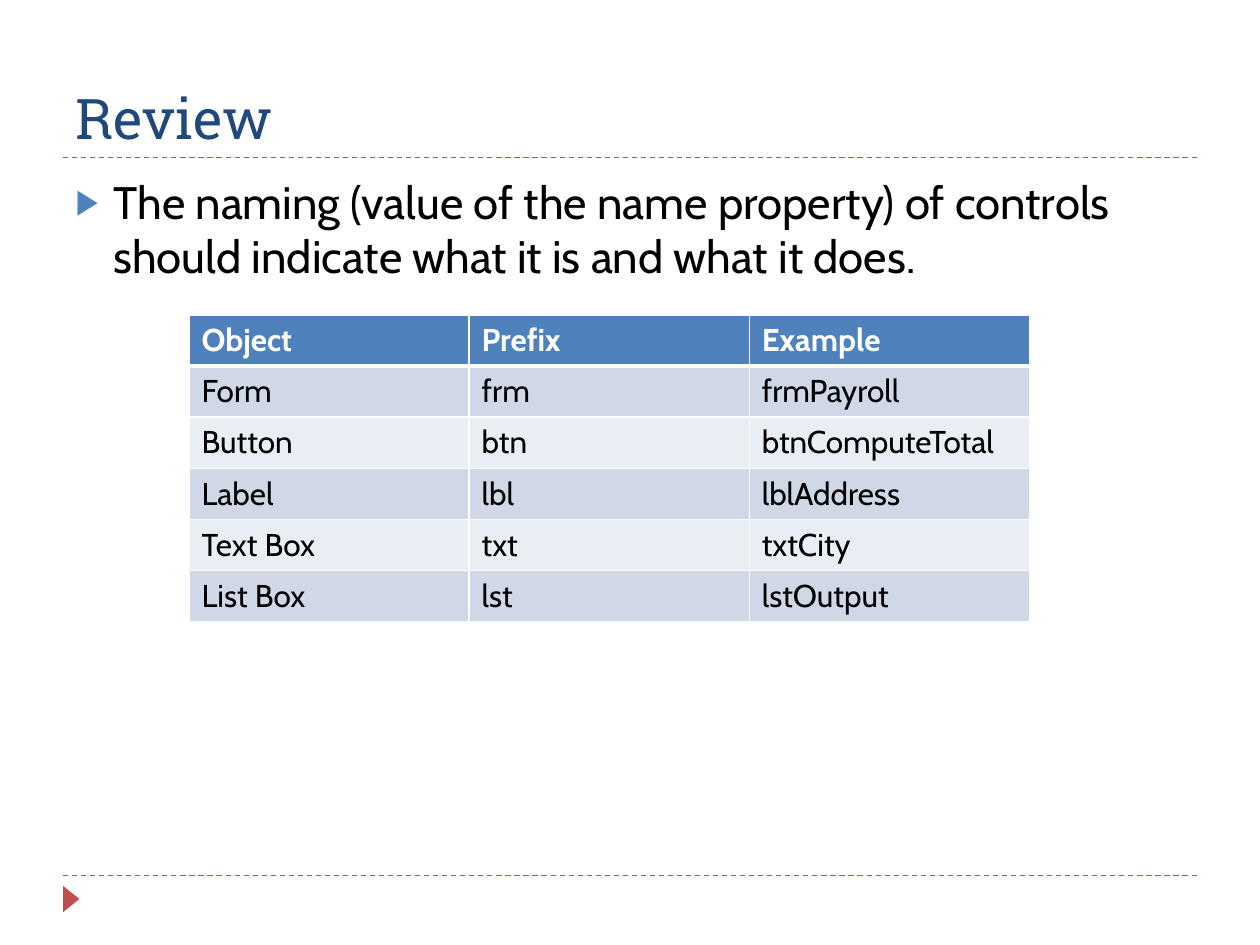
from lxml import etree
from pptx import Presentation
from pptx.dml.color import RGBColor
from pptx.enum.dml import MSO_LINE
from pptx.enum.shapes import MSO_CONNECTOR, MSO_SHAPE
from pptx.enum.text import MSO_ANCHOR, MSO_AUTO_SIZE, PP_ALIGN
from pptx.oxml import parse_xml
from pptx.oxml.ns import nsdecls, qn
from pptx.util import Inches, Pt

STRAIGHT = MSO_CONNECTOR.STRAIGHT
TRIANGLE = MSO_SHAPE.ISOSCELES_TRIANGLE
DASH = MSO_LINE.DASH
LEFT = PP_ALIGN.LEFT
TOP, BOTTOM = MSO_ANCHOR.TOP, MSO_ANCHOR.BOTTOM
NO_FIT = MSO_AUTO_SIZE.NONE

NAVY = RGBColor(0x1F, 0x49, 0x7D)
BLUE = RGBColor(0x4F, 0x81, 0xBD)
RED = RGBColor(0xC0, 0x50, 0x4D)
BLACK = RGBColor(0, 0, 0)
WHITE = RGBColor(0xFF, 0xFF, 0xFF)
BANDS = (RGBColor(0xD0, 0xD8, 0xE8), RGBColor(0xE9, 0xED, 0xF4))
HEAD_FONT, BODY_FONT = "Roboto Slab", "Cabin"

ROWS = [
    ("Object", "Prefix", "Example"),
    ("Form", "frm", "frmPayroll"),
    ("Button", "btn", "btnComputeTotal"),
    ("Label", "lbl", "lblAddress"),
    ("Text Box", "txt", "txtCity"),
    ("List Box", "lst", "lstOutput"),
]


def format_runs(p, font, size, color, bold=False):
    """Apply one font style to every run of a paragraph."""
    for r in p.runs:
        r.font.name = font
        r.font.size = Pt(size)
        r.font.color.rgb = color
        r.font.bold = bold


def fill_placeholder(sp, text, top, anchor, font, size, color):
    """Place a placeholder, set its text and return the paragraph."""
    sp.left, sp.top = Inches(0.5), Inches(top)
    sp.width, sp.height = Inches(9), Inches(1.08)
    tf = sp.text_frame
    tf.text = text
    tf.word_wrap = True
    tf.auto_size = NO_FIT
    tf.vertical_anchor = anchor
    p = tf.paragraphs[0]
    p.alignment = LEFT
    format_runs(p, font, size, color)
    return p


def add_bullet(p, char, color, percent, indent):
    """Give a paragraph a coloured bullet and a hanging indent."""
    pPr = p._p.get_or_add_pPr()
    pPr.set("marL", str(Inches(indent)))
    pPr.set("indent", str(-Inches(indent)))
    clr = etree.SubElement(pPr, qn("a:buClr"))
    etree.SubElement(clr, qn("a:srgbClr"), val=str(color))
    etree.SubElement(pPr, qn("a:buSzPct"), val=str(percent * 1000))
    etree.SubElement(pPr, qn("a:buFont"), typeface="Arial")
    etree.SubElement(pPr, qn("a:buChar"), char=char)


def add_rule(s, y):
    """Draw a dashed line across the slide."""
    line = s.shapes.add_connector(STRAIGHT, Inches(0.5), Inches(y), Inches(9.5), Inches(y))
    line.line.color.rgb = RED
    line.line.width = Pt(0.75)
    line.line.dash_style = DASH
    etree.SubElement(line._element.spPr, qn("a:effectLst"))


def add_marker(s):
    """Draw the small triangle that points right in the footer."""
    sp = s.shapes.add_shape(TRIANGLE, Inches(0.46), Inches(7.07), Inches(0.21), Inches(0.13))
    sp.rotation = 90
    sp.shadow.inherit = False
    sp.fill.solid()
    sp.fill.fore_color.rgb = RED
    sp.line.fill.background()


def add_borders(cell, widths):
    """Draw white cell borders, given a width in points per side."""
    tcPr = cell._tc.get_or_add_tcPr()
    for side, width in widths.items():
        tcPr.append(parse_xml(
            f'<a:ln{side} {nsdecls("a")} w="{Pt(width)}"><a:solidFill>'
            f'<a:srgbClr val="{WHITE}"/></a:solidFill></a:ln{side}>'))


def add_naming_table(s):
    """Add the table of control prefixes."""
    table = s.shapes.add_table(len(ROWS), len(ROWS[0]), Inches(1.5), Inches(2.5),
                               Inches(6.67), Inches(2.43)).table
    for i, row in enumerate(ROWS):
        header = i == 0
        for j, text in enumerate(row):
            cell = table.cell(i, j)
            cell.text = text
            format_runs(cell.text_frame.paragraphs[0], BODY_FONT, 18,
                        WHITE if header else BLACK, header)
            add_borders(cell, {"L": 1, "R": 1, "T": 3 if i == 1 else 1,
                               "B": 3 if header else 1})
            cell.fill.solid()
            cell.fill.fore_color.rgb = BLUE if header else BANDS[(i - 1) % 2]


def main():
    """Build the review slide and save it."""
    prs = Presentation()
    prs.slide_width, prs.slide_height = Inches(10), Inches(7.5)
    s = prs.slides.add_slide(prs.slide_layouts[1])
    for y in (6.95, 1.25):
        add_rule(s, y)
    add_marker(s)
    fill_placeholder(s.shapes.title, "Review", 0.17, BOTTOM, HEAD_FONT, 32, NAVY)
    p = fill_placeholder(
        s.placeholders[1],
        "The naming (value of the name property) of controls should indicate "
        "what it is and what it does.",
        1.33, TOP, BODY_FONT, 26, BLACK)
    p.space_before = Pt(6)
    add_bullet(p, "▶", BLUE, 76, 0.3)
    add_naming_table(s)
    prs.save("out.pptx")


if __name__ == "__main__":
    main()
